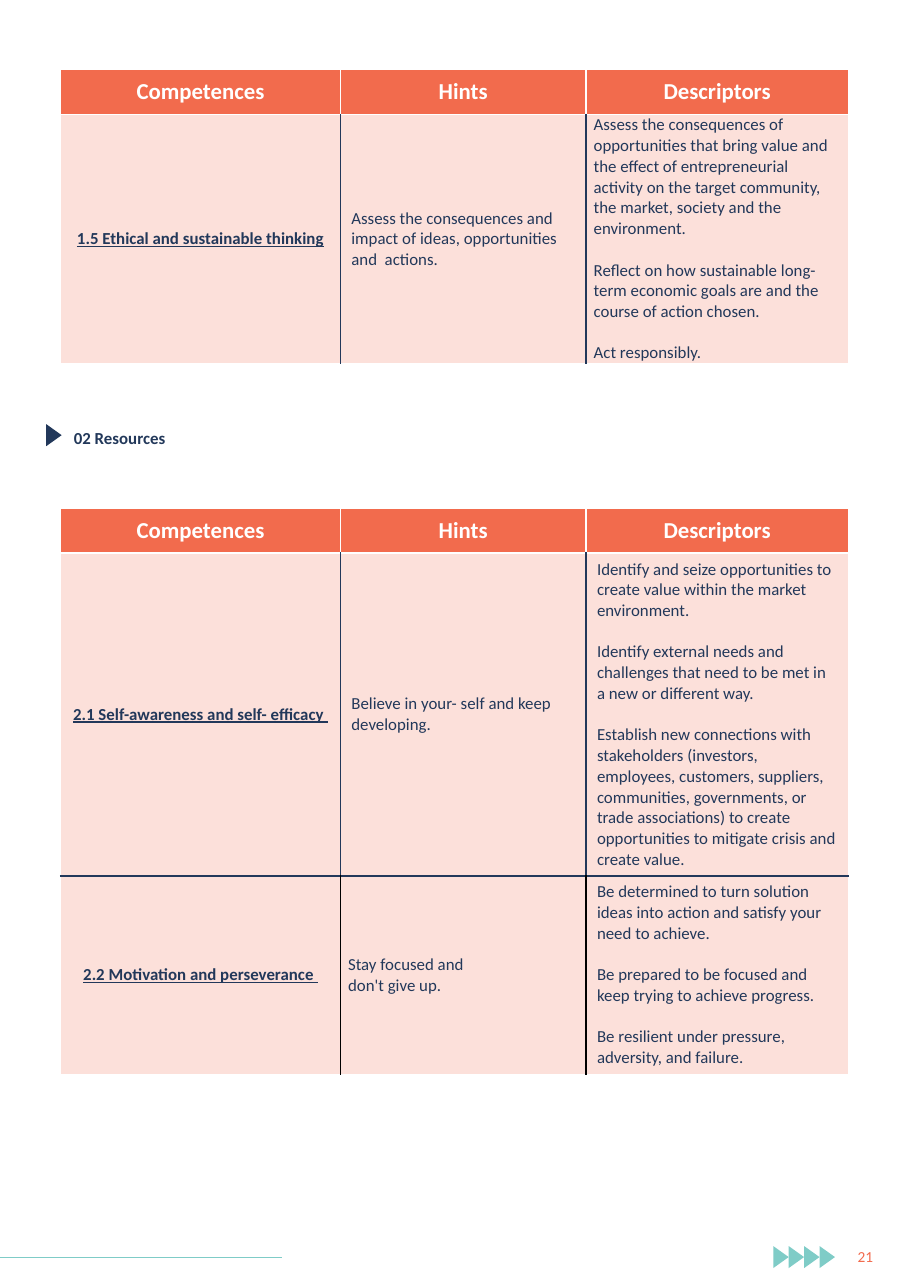
"""Build page 21: competence tables with hints and descriptors."""
from pptx import Presentation
from pptx.dml.color import RGBColor
from pptx.enum.text import MSO_ANCHOR, MSO_AUTO_SIZE, PP_ALIGN
from pptx.oxml import parse_xml
from pptx.oxml.ns import nsdecls
from pptx.util import Inches, Pt
from lxml import etree

COLORS = {"orange": "F26B4D", "pink": "FCE0DA", "navy": "22385A",
          "teal": "7FCCC7", "white": "FFFFFF", "black": "000000"}
HEADERS = ["Competences", "Hints", "Descriptors"]
COL_WIDTHS = [2.54, 2.23, 2.38]

# Rows: competence, hint, descriptors, divider colour, height, narrow-margin column
TABLES = [
    (0.63, [
        ("1.5 Ethical and sustainable thinking",
         "Assess the consequences and impact of ideas, opportunities and  actions.",
         ["Assess the consequences of opportunities that bring value and the effect of "
          "entrepreneurial activity on the target community, the market, society and the "
          "environment.",
          "Reflect on how sustainable long-term economic goals are and the course of "
          "action chosen.",
          "Act responsibly."], "navy", 2.26, 2),
    ]),
    (4.61, [
        ("2.1 Self-awareness and self- efficacy ",
         "Believe in your- self and keep developing.",
         ["Identify and seize opportunities to create value within the market environment.",
          "Identify external needs and challenges that need to be met in a new or "
          "different way.",
          "Establish new connections with stakeholders (investors, employees, customers, "
          "suppliers, communities, governments, or trade associations) to create "
          "opportunities to mitigate crisis and create value."], "navy", 2.93, None),
        ("2.2 Motivation and perseverance ",
         "Stay focused and\vdon't give up.",
         ["Be determined to turn solution ideas into action and satisfy your need to "
          "achieve.",
          "Be prepared to be focused and keep trying to achieve progress.",
          "Be resilient under pressure, adversity, and failure."], "black", 1.8, 1),
    ]),
]


def style(p, size, color, bold=False, align=PP_ALIGN.LEFT):
    p.alignment = align
    p.font.name = "Calibri"
    p.font.size = Pt(size)
    p.font.bold = bold
    p.font.color.rgb = RGBColor.from_string(COLORS[color])


def add_triangle(s, left, top, color):
    x, y = Inches(left), Inches(top)
    builder = s.shapes.build_freeform(x, y)
    builder.add_line_segments([(x + Inches(0.14), y + Inches(0.1)),
                               (x, y + Inches(0.2))])
    sp = builder.convert_to_shape()
    sp.shadow.inherit = False
    sp.fill.solid()
    sp.fill.fore_color.rgb = RGBColor.from_string(COLORS[color])
    sp.line.fill.background()


prs = Presentation()
prs.slide_width, prs.slide_height = Inches(8.27), Inches(11.69)
s = prs.slides.add_slide(prs.slide_layouts[5])

title = s.shapes.title
title.left, title.top = Inches(0.57), Inches(3.83)
title.width, title.height = Inches(7.15), Inches(0.55)
tf = title.text_frame
tf.auto_size = MSO_AUTO_SIZE.NONE
tf.vertical_anchor = MSO_ANCHOR.TOP
tf.text = "02 Resources"
style(tf.paragraphs[0], 11, "navy", True)
add_triangle(s, 0.42, 3.85, "navy")

for top, rows in TABLES:
    heights = [0.41] + [row[4] for row in rows]
    tbl = s.shapes.add_table(len(heights), 3, Inches(0.55), Inches(top),
                             Inches(sum(COL_WIDTHS)), Inches(sum(heights))).table
    tbl.horz_banding = False
    for col, width in zip(tbl.columns, COL_WIDTHS):
        col.width = Inches(width)
    for r, height in enumerate(heights):
        tbl.rows[r].height = Inches(height)
        divider = rows[r - 1][3] if r else "white"
        upper = "navy" if r > 1 else "white"
        lower = "navy" if 0 < r < len(rows) else "white"
        for c in range(3):
            cell = tbl.cell(r, c)
            cell.vertical_anchor = MSO_ANCHOR.MIDDLE
            cell.fill.solid()
            cell.fill.fore_color.rgb = RGBColor.from_string(
                COLORS["pink" if r else "orange"])
            edges = {"lnL": divider if c else "white",
                     "lnR": divider if c < 2 else "white",
                     "lnT": upper, "lnB": lower}
            for i, (edge, color) in enumerate(edges.items()):
                cell._tc.get_or_add_tcPr().insert(i, parse_xml(
                    f'<a:{edge} {nsdecls("a")} w="12700"><a:solidFill>'
                    f'<a:srgbClr val="{COLORS[color]}"/></a:solidFill></a:{edge}>'))
            tf = cell.text_frame
            if r == 0:
                tf.text = HEADERS[c]
                style(tf.paragraphs[0], 14.9, "white", True, PP_ALIGN.CENTER)
                continue
            if c == rows[r - 1][5]:
                cell.margin_left = cell.margin_right = Inches(0.07)
                cell.margin_top = cell.margin_bottom = 0
            content = rows[r - 1][c]
            texts = content if c == 2 else [content]
            for i, text in enumerate(texts):
                p = tf.add_paragraph() if i else tf.paragraphs[0]
                p.text = text
                style(p, 11, "navy", c == 0, PP_ALIGN.LEFT if c else PP_ALIGN.CENTER)
                p.font.underline = c == 0
                if i:
                    p.space_before = Pt(13.4)

rule = s.shapes.add_connector(1, 0, Inches(11.41), Inches(2.56), Inches(11.41))
rule.line.color.rgb = RGBColor.from_string(COLORS["teal"])
rule.line.width = Pt(0.75)
etree.SubElement(rule._element.spPr,
                 "{http://schemas.openxmlformats.org/drawingml/2006/main}effectLst")

for i in range(4):
    add_triangle(s, 7.02 + 0.14 * i, 11.31, "teal")

page = s.shapes.add_textbox(Inches(7.66), Inches(11.26), Inches(0.39), Inches(0.29))
tf = page.text_frame
tf.word_wrap = True
tf.vertical_anchor = MSO_ANCHOR.MIDDLE
tf.text = "21"
style(tf.paragraphs[0], 10, "orange", align=PP_ALIGN.CENTER)

prs.save("out.pptx")
